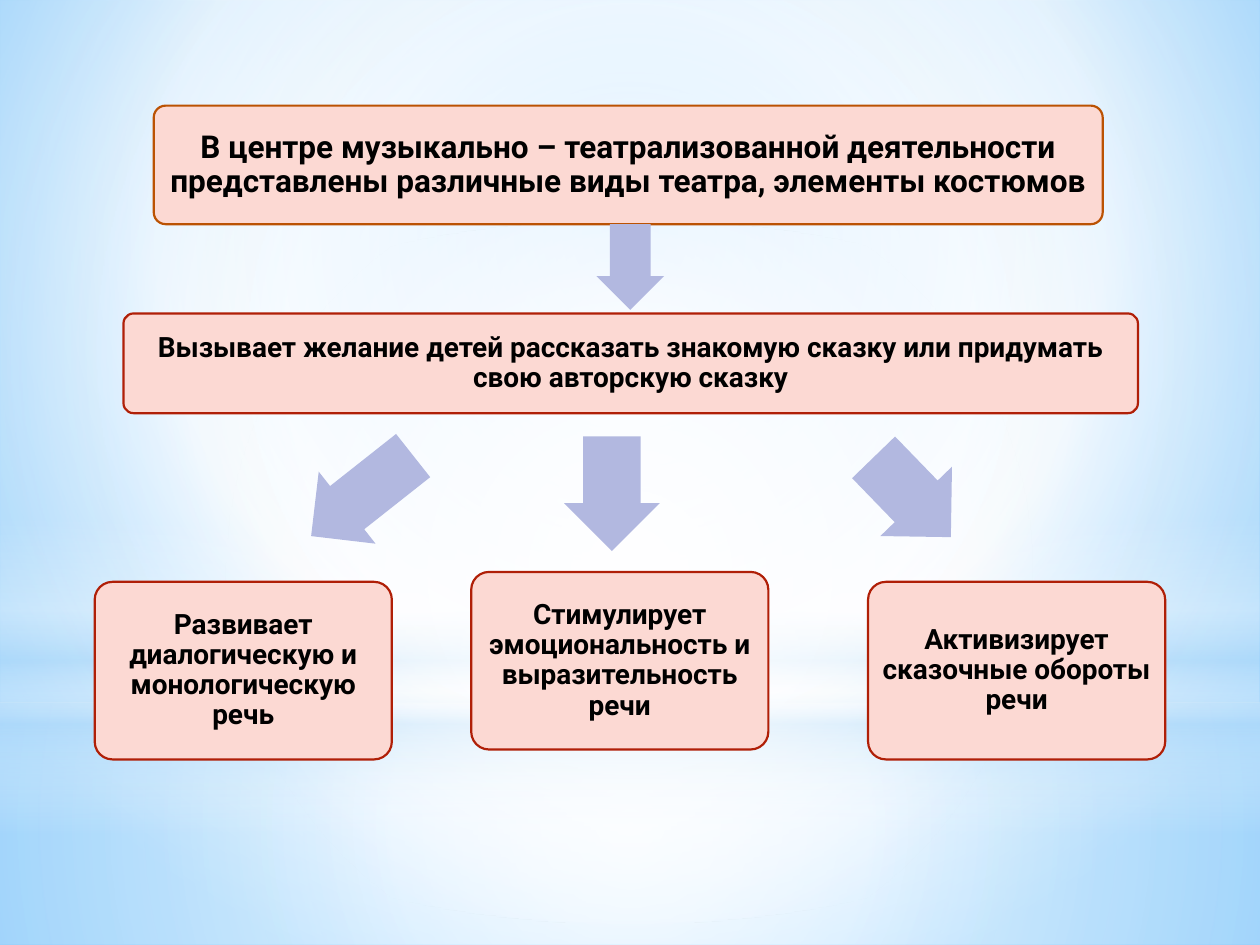
from lxml import etree
from pptx import Presentation
from pptx.dml.color import RGBColor
from pptx.enum.shapes import MSO_SHAPE as Shape
from pptx.enum.text import MSO_ANCHOR as Anchor, PP_ALIGN as Align
from pptx.oxml.ns import nsdecls, qn
from pptx.util import Cm, Pt

ROSE, LILAC, ORANGE, RED = "FCD9D3", "B2B8E0", "BB5203", "B01F07"
WHITE, SKY = "FFFFFF", "B4DCFA"
CENTRE = (50, 50, 50, 50)
FONT = {"name": "Roboto", "bold": True}
FRAME = {"word_wrap": True, "vertical_anchor": Anchor.MIDDLE,
         **{f"margin_{side}": Cm(0.18) for side in ("left", "top", "right", "bottom")}}
PARAGRAPH = {"alignment": Align.CENTER, "line_spacing": 0.9}


def apply(target, values):
    """Set every attribute in a dict of format values."""
    for name, value in values.items():
        setattr(target, name, value)


def colour(hex_value):
    """Turn a hex string into a colour."""
    return RGBColor.from_string(hex_value)


def paint_gradient(empty_fill, stops, focus=None):
    """Replace an empty fill by a circular gradient, or a vertical one without focus."""
    gradient = etree.fromstring(f'<a:gradFill {nsdecls("a")} rotWithShape="1"/>')
    stop_list = etree.SubElement(gradient, qn("a:gsLst"))
    for position, hex_value, opacity in stops:
        stop = etree.SubElement(stop_list, qn("a:gs"), pos=str(position * 1000))
        tint = etree.SubElement(stop, qn("a:srgbClr"), val=hex_value)
        if opacity < 100:
            etree.SubElement(tint, qn("a:alpha"), val=str(opacity * 1000))
    if focus:
        path = etree.SubElement(gradient, qn("a:path"), path="circle")
        edges = {side: str(part * 1000) for side, part in zip("ltrb", focus)}
        etree.SubElement(path, qn("a:fillToRect"), **edges)
    else:
        etree.SubElement(gradient, qn("a:lin"), ang="5400000", scaled="0")
    empty_fill.getparent().replace(empty_fill, gradient)


def add_plain(slide, kind, box):
    """Add a shape without shadow, fill or line at a box given in centimetres."""
    shape = slide.shapes.add_shape(kind, *map(Cm, box))
    shape.shadow.inherit = False
    shape.fill.background()
    shape.line.fill.background()
    return shape


def add_backdrop(slide, box):
    """Paint the sky background and its layers of light over the box."""
    left, top, width, height = box
    slide.background.fill.background()
    paint_gradient(slide.element.xpath("p:cSld/p:bg//a:noFill")[0],
                   [(0, "9ED5FF", 100), (60, WHITE, 100), (100, "5BB9FF", 100)],
                   (20, 10, 20, 60))
    horizon = 14.17
    layers = [
        (Shape.RECTANGLE, horizon, height - horizon,
         [(0, WHITE, 91), (37, WHITE, 76), (100, SKY, 79)], CENTRE),
        (Shape.RECTANGLE, 0, horizon,
         [(0, WHITE, 89), (48, WHITE, 62), (100, SKY, 79)], CENTRE),
        (Shape.RECTANGLE, 10.46, 6.35,
         [(0, WHITE, 0), (29, WHITE, 30), (45, SKY, 40),
          (55, WHITE, 26), (65, SKY, 60), (100, WHITE, 0)], None),
        (Shape.OVAL, 4.45, horizon, [(0, WHITE, 100), (56, WHITE, 0)], CENTRE),
    ]
    for kind, offset, depth, stops, focus in layers:
        layer = add_plain(slide, kind, (left, top + offset, width, depth))
        paint_gradient(layer.element.xpath("p:spPr/a:noFill")[0], stops, focus)


def add_card(slide, box, wording, size=16, outline=RED):
    """Add a rounded card with centred bold wording."""
    card = add_plain(slide, Shape.ROUNDED_RECTANGLE, box)
    card.adjustments[0] = 0.1
    card.fill.solid()
    card.fill.fore_color.rgb = colour(ROSE)
    card.line.color.rgb = colour(outline)
    card.line.width = Pt(1.25)
    apply(card.text_frame, FRAME)
    paragraph = card.text_frame.paragraphs[0]
    apply(paragraph, PARAGRAPH)
    run = paragraph.add_run()
    run.text = wording
    apply(run.font, {**FONT, "size": Pt(size)})
    run.font.color.rgb = colour("000000")


def add_arrow(slide, box, rotation=90):
    """Add a block arrow turned clockwise from pointing right."""
    arrow = add_plain(slide, Shape.RIGHT_ARROW, box)
    arrow.adjustments[0], arrow.adjustments[1] = 0.6, 0.5
    arrow.rotation = rotation
    arrow.fill.solid()
    arrow.fill.fore_color.rgb = colour(LILAC)


def add_premise(slide, box):
    """Place the theatre card, the arrow and the storytelling card."""
    left, top, width, _ = box
    add_card(slide, (left + 0.61, top, 19.13, 2.39),
             "В центре музыкально – театрализованной деятельности представлены "
             "различные виды театра, элементы костюмов", 18, ORANGE)
    add_arrow(slide, (left + 9.35, top + 2.57, 1.73, 1.37))
    add_card(slide, (left, top + 4.19, width, 2.01),
             "Вызывает желание детей рассказать знакомую сказку или придумать "
             "свою авторскую сказку")


def add_outcomes(slide, box):
    """Place the three outcome cards, each under its arrow."""
    left, top, _, height = box
    card_width, card_height = 5.99, 3.58
    outcomes = [
        (0, height - card_height, "Развивает диалогическую и монологическую речь",
         (4.08, 0.08, 2.62, 1.85), 141.7),
        (7.59, height - card_height - 0.2,
         "Стимулирует эмоциональность и выразительность речи",
         (9.27, 0, 2.31, 1.93), 90),
        (15.59, height - card_height, "Активизирует сказочные обороты речи",
         (15.36, 0.03, 2.24, 2.01), 45.9),
    ]
    for card_x, card_y, wording, (x, y, length, breadth), rotation in outcomes:
        add_arrow(slide, (left + x, top + y, length, breadth), rotation)
        add_card(slide, (left + card_x, top + card_y, card_width, card_height), wording)


def main():
    """Build and save the slide."""
    deck = Presentation()
    deck.slide_width, deck.slide_height = Cm(25.4), Cm(19.05)
    slide = deck.slides.add_slide(deck.slide_layouts.get_by_name("Blank"))
    add_backdrop(slide, (0, 0, 25.4, 19.05))
    add_premise(slide, (2.49, 2.13, 20.45, 6.2))
    add_outcomes(slide, (1.91, 8.99, 21.58, 6.32))
    deck.save("out.pptx")


if __name__ == "__main__":
    main()
